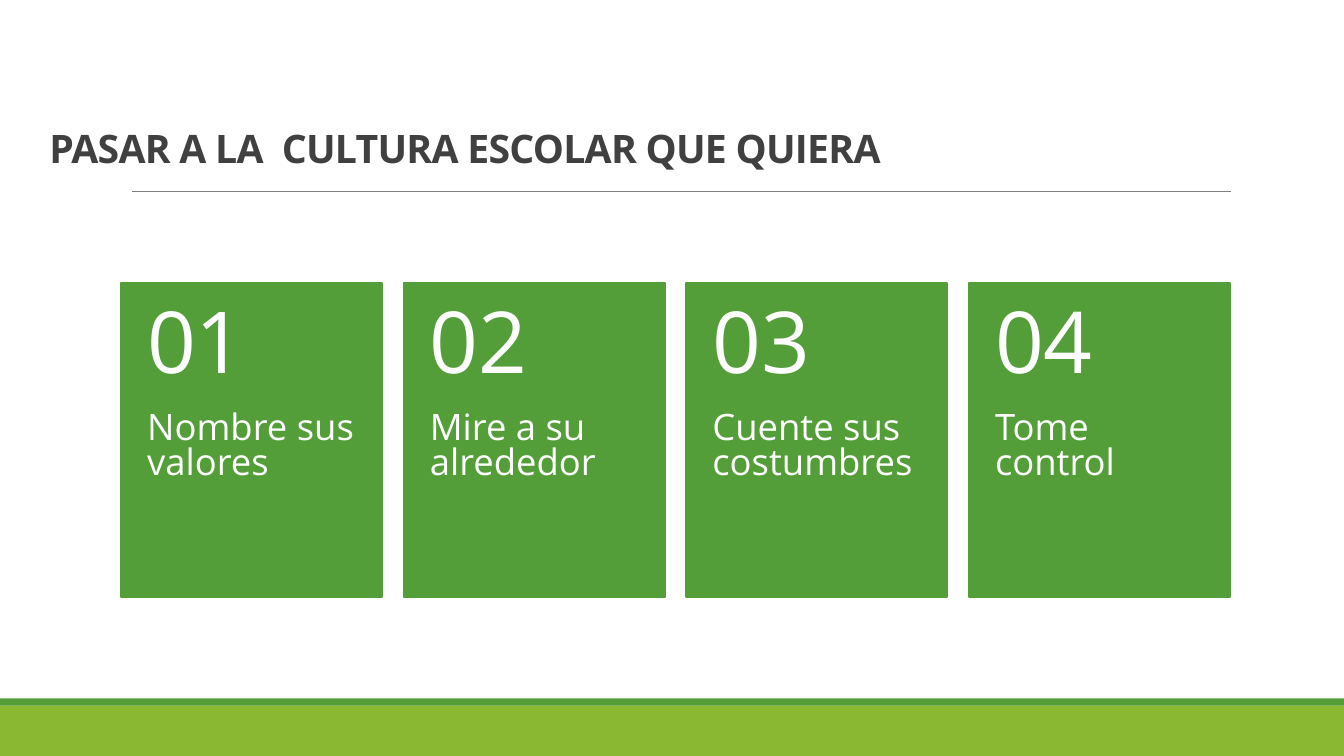
import pptx
import pptx.util
import pptx.dml.color
import pptx.enum.shapes
import pptx.enum.text
import pptx.oxml
from pptx.util import Inches

TITLE = "PASAR A LA  CULTURA ESCOLAR QUE QUIERA"
STEPS = [
    ("01", "Nombre sus valores"),
    ("02", "Mire a su alrededor"),
    ("03", "Cuente sus costumbres"),
    ("04", "Tome control"),
]
FONT = "Open Sans"
GREEN, LIME, WHITE, DARK, GRAY = "549E39", "8AB833", "FFFFFF", "404040", "808080"
WIDTH, HEIGHT = 13.33, 7.5
CARD_LEFT, CARD_TOP, CARD_WIDTH, CARD_HEIGHT = 1.2, 2.81, 2.59, 3.11
CARD_PITCH, NUMBER_HEIGHT = 2.803, 1.25
ANCHOR = pptx.enum.text.MSO_ANCHOR


def color(value):
    return pptx.dml.color.RGBColor.from_string(value)


def add_rectangle(page, left, top, width, height, fill, outlined=False):
    shape = page.shapes.add_shape(
        pptx.enum.shapes.MSO_SHAPE.RECTANGLE,
        Inches(left), Inches(top), Inches(width), Inches(height))
    shape.shadow.inherit = False
    shape.fill.solid()
    shape.fill.fore_color.rgb = color(fill)
    if outlined:
        shape.line.color.rgb = color(fill)
        shape.line.width = pptx.util.Pt(1.25)
    else:
        shape.line.fill.background()


def write(box, text, size, fill, anchor, insets, spacing, bold=False):
    frame = box.text_frame
    frame.text = text
    frame.word_wrap = True
    frame.auto_size = pptx.enum.text.MSO_AUTO_SIZE.NONE
    frame.vertical_anchor = anchor
    (frame.margin_left, frame.margin_top,
     frame.margin_right, frame.margin_bottom) = map(Inches, insets)
    para = frame.paragraphs[0]
    para.alignment = pptx.enum.text.PP_ALIGN.LEFT
    para.line_spacing = spacing
    span = para.runs[0]
    span.font.name = FONT
    span.font.size = pptx.util.Pt(size)
    span.font.bold = bold
    span.font.color.rgb = color(fill)
    return span


def add_bands(page):
    add_rectangle(page, 0, 7, WIDTH, 0.5, LIME)
    add_rectangle(page, 0, 6.93, WIDTH, 0.07, GREEN)
    rule = page.shapes.add_connector(
        pptx.enum.shapes.MSO_CONNECTOR.STRAIGHT,
        Inches(1.31), Inches(1.9), Inches(12.21), Inches(1.9))
    rule.line.color.rgb = color(GRAY)
    rule.line.width = pptx.util.Pt(0.5)
    rule._element.spPr.append(pptx.oxml.parse_xml(
        '<a:effectLst xmlns:a="http://schemas.openxmlformats.org/drawingml/2006/main"/>'))


def add_title(page):
    title = page.shapes.title
    title.left, title.top = Inches(0.27), Inches(0.31)
    title.width, title.height = Inches(13.06), Inches(1.59)
    span = write(title, TITLE, 28, DARK, ANCHOR.BOTTOM,
                 (0.22, 0.2, 0.2, 0.2), 0.85, bold=True)
    span.font._element.set("spc", "-50")


def add_card(page, left, number, caption):
    add_rectangle(page, left, CARD_TOP, CARD_WIDTH, CARD_HEIGHT, GREEN, outlined=True)
    caption_box = page.shapes.add_textbox(
        Inches(left), Inches(CARD_TOP + NUMBER_HEIGHT),
        Inches(CARD_WIDTH), Inches(CARD_HEIGHT - NUMBER_HEIGHT))
    write(caption_box, caption, 26, WHITE, ANCHOR.TOP, (0.26, 0.03, 0.26, 0.36), 0.8)
    number_box = page.shapes.add_textbox(
        Inches(left), Inches(CARD_TOP), Inches(CARD_WIDTH), Inches(NUMBER_HEIGHT))
    write(number_box, number, 61, WHITE, ANCHOR.MIDDLE, (0.26, 0.18, 0.26, 0.18), 0.9)


def main():
    deck = pptx.Presentation()
    deck.slide_width, deck.slide_height = Inches(WIDTH), Inches(HEIGHT)
    page = deck.slides.add_slide(deck.slide_layouts[5])
    page.background.fill.solid()
    page.background.fill.fore_color.rgb = color(WHITE)
    add_bands(page)
    add_title(page)
    for index, (number, caption) in enumerate(STEPS):
        add_card(page, CARD_LEFT + index * CARD_PITCH, number, caption)
    deck.save("out.pptx")


if __name__ == "__main__":
    main()
